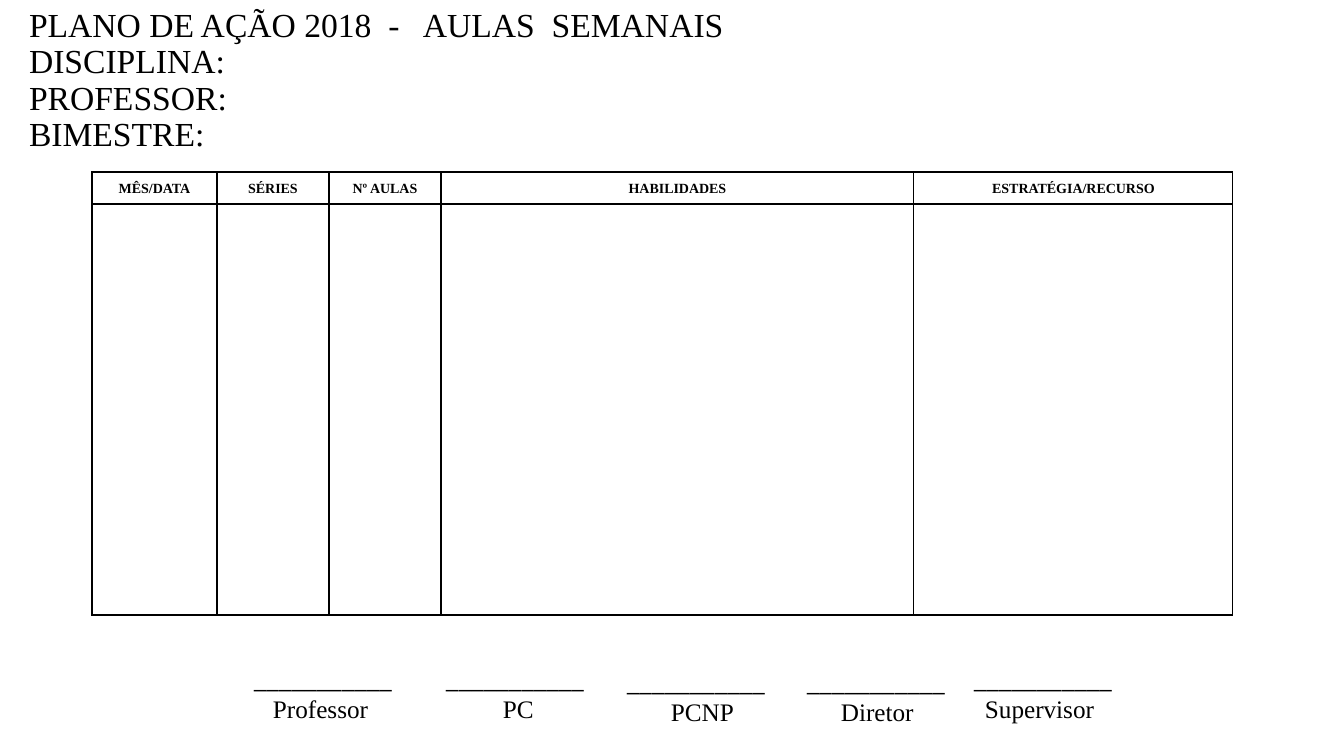
from lxml import etree
from pptx import Presentation
from pptx.dml.color import RGBColor
from pptx.enum.text import MSO_ANCHOR, MSO_AUTO_SIZE, PP_ALIGN
from pptx.oxml.ns import qn
from pptx.util import Emu, Pt

MIDDLE = MSO_ANCHOR.MIDDLE
NO_FIT = MSO_AUTO_SIZE.NONE
LEFT, CENTER = PP_ALIGN.LEFT, PP_ALIGN.CENTER
BLACK = RGBColor(0, 0, 0)
SERIF, SANS = "Times New Roman", "Calibri"


def px(n):
    return Emu(round(n * 914400 / 100.8))


def style(para, size, face, bold=False):
    for run in para.runs:
        run.font.size = Pt(size)
        run.font.name = face
        run.font.bold = bold
        run.font.color.rgb = BLACK


deck = Presentation()
deck.slide_width, deck.slide_height = px(1344), px(756)
slide = deck.slides.add_slide(deck.slide_layouts[5])

title = slide.shapes.title
title.left, title.top, title.width, title.height = px(19), px(26), px(1159), px(146)
frame = title.text_frame
frame.text = "PLANO DE AÇÃO 2018  -   AULAS  SEMANAIS\vDISCIPLINA:\vPROFESSOR:\vBIMESTRE:"
frame.word_wrap = True
frame.auto_size = NO_FIT
frame.vertical_anchor = MIDDLE
frame.margin_left = frame.margin_right = px(10)
frame.margin_top, frame.margin_bottom = 0, px(36)
head = frame.paragraphs[0]
head.alignment = LEFT
head.line_spacing = 0.9
style(head, 24, SERIF)

cols = [
    ("MÊS/DATA", 125),
    ("SÉRIES", 112),
    ("Nº AULAS", 112),
    ("HABILIDADES", 473),
    ("ESTRATÉGIA/RECURSO", 319),
]
rows = [32, 411]
wide = sum(width for name, width in cols)
table = slide.shapes.add_table(
    len(rows), len(cols), px(92), px(172), px(wide), px(sum(rows))
).table
table.first_row = table.horz_banding = False
for row, high in zip(table.rows, rows):
    row.height = px(high)
for i, (name, width) in enumerate(cols):
    table.columns[i].width = px(width)
    table.cell(0, i).text = name

for cell in table.iter_cells():
    cell.vertical_anchor = MIDDLE
    cell.margin_left = cell.margin_right = px(6)
    cell.margin_top = cell.margin_bottom = 0
    para = cell.text_frame.paragraphs[0]
    para.alignment = CENTER
    para.line_spacing = 1.07
    style(para, 10, SERIF, True)
    props = cell._tc.get_or_add_tcPr()
    for side in ("a:lnL", "a:lnR", "a:lnT", "a:lnB"):
        line = etree.SubElement(props, qn(side), w=str(Pt(1)))
        fill = etree.SubElement(line, qn("a:solidFill"))
        etree.SubElement(fill, qn("a:srgbClr"), val=str(BLACK))
    cell.fill.background()

signers = [
    ("Professor", 244, 658, 19),
    ("PC", 436, 658, 57),
    ("PCNP", 617, 661, 44),
    ("Diretor", 797, 661, 34),
    ("Supervisor", 964, 658, 11),
]
for name, left, top, indent in signers:
    frame = slide.shapes.add_textbox(px(left), px(top), px(162), px(72)).text_frame
    frame.word_wrap = True
    frame.margin_left = frame.margin_right = px(10)
    frame.text = "_" * 11
    style(frame.paragraphs[0], 18, SANS)
    label = frame.add_paragraph()
    label.text = name
    label._p.get_or_add_pPr().set("marL", str(px(indent)))
    style(label, 18, SERIF)

deck.save("out.pptx")
